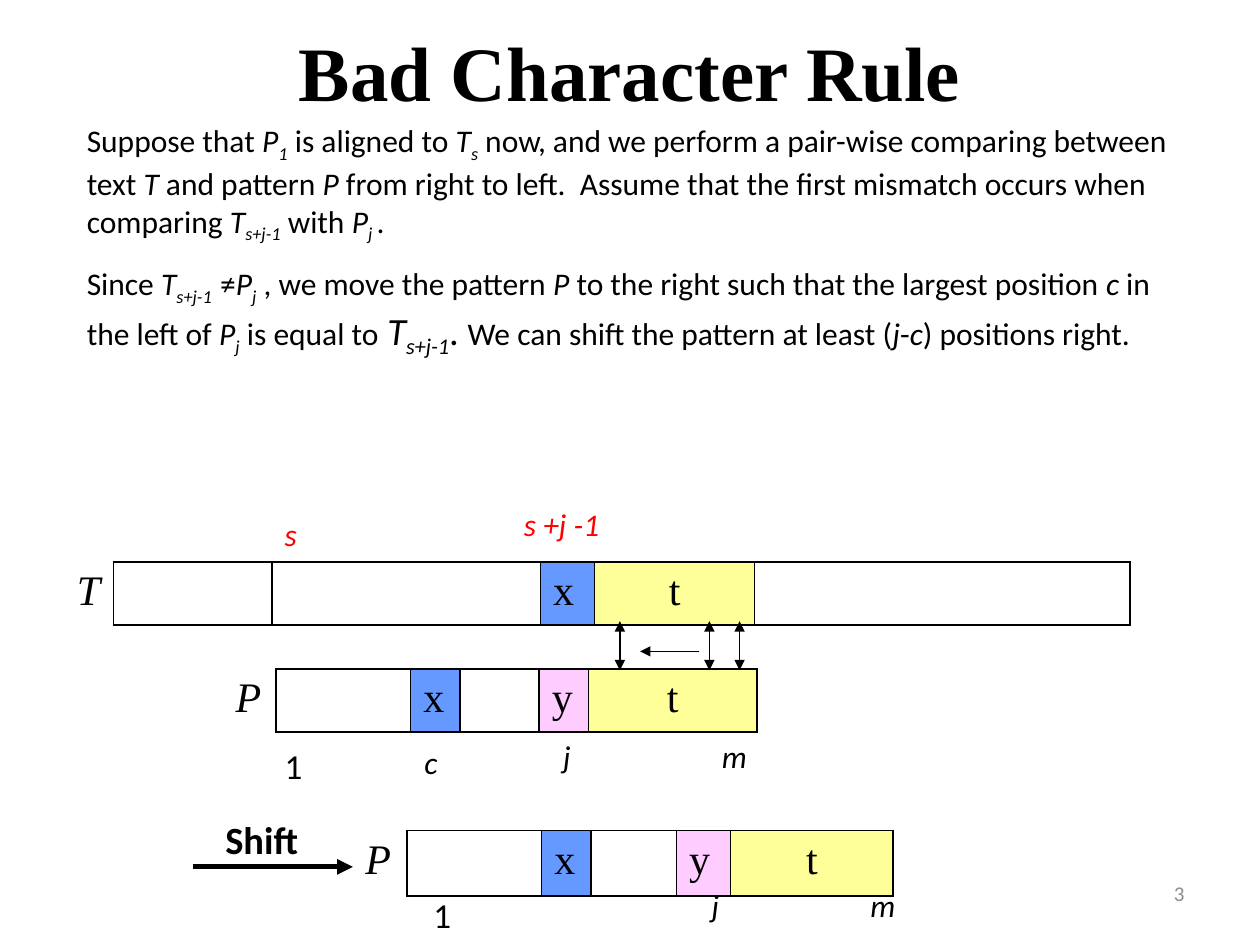
from lxml import etree
from pptx import Presentation
from pptx.dml.color import RGBColor
from pptx.enum.shapes import MSO_CONNECTOR
from pptx.enum.text import MSO_ANCHOR, PP_ALIGN
from pptx.oxml.ns import qn
from pptx.util import Inches, Pt

LINE = MSO_CONNECTOR.STRAIGHT
MID, TOP = MSO_ANCHOR.MIDDLE, MSO_ANCHOR.TOP
LEFT, MIDDLE, RIGHT = PP_ALIGN.LEFT, PP_ALIGN.CENTER, PP_ALIGN.RIGHT

BLACK, RED, GRAY = "000000", "FF0000", "8C8C8C"
BLUE, PINK, GOLD = "6699FF", "FFCCFF", "FFFF99"
FILLS = {"x": BLUE, "y": PINK, "t": GOLD}


def color(code):
    return RGBColor.from_string(code)


class Deck:
    sans = "Calibri"
    serif = "Times New Roman"

    def __init__(self):
        self.prs = Presentation()
        self.prs.slide_width = Inches(10)
        self.prs.slide_height = Inches(7.5)
        self.slide = self.prs.slides.add_slide(self.prs.slide_layouts[5])

    def run(self, para, text, mark="", size=18, tint=BLACK, face=None):
        """Marks: i italic, b bold, s subscript."""
        run = para.add_run()
        run.text = text
        font = run.font
        font.name = face or self.sans
        font.size = Pt(size)
        font.italic = "i" in mark
        font.bold = "b" in mark
        font.color.rgb = color(tint)
        if "s" in mark:
            run._r.get_or_add_rPr().set("baseline", "-25000")

    def title(self, text, x, y, w, h):
        shape = self.slide.shapes.title
        shape.left, shape.top = Inches(x), Inches(y)
        shape.width, shape.height = Inches(w), Inches(h)
        frame = shape.text_frame
        frame.vertical_anchor = MID
        para = frame.paragraphs[0]
        para.alignment = MIDDLE
        self.run(para, text, "b", 44, face=self.serif)

    def text(self, paras, x, y, w, h, align=LEFT, anchor=TOP):
        box = self.slide.shapes.add_textbox(
            Inches(x), Inches(y), Inches(w), Inches(h))
        frame = box.text_frame
        frame.word_wrap = True
        frame.vertical_anchor = anchor
        for i, runs in enumerate(paras):
            para = frame.add_paragraph() if i else frame.paragraphs[0]
            para.alignment = align
            if i:
                para.space_before = Pt(11)
            for run in runs:
                self.run(para, *run)

    def label(self, text, x, y, w=0.39, h=0.5, mark="i", size=18, tint=BLACK):
        self.text([[(text, mark, size, tint)]], x, y, w, h)

    def edge(self, cell, side, shown):
        props = cell._tc.get_or_add_tcPr()
        line = etree.SubElement(props, qn("a:ln" + side), w=str(Pt(1)))
        if shown:
            fill = etree.SubElement(line, qn("a:solidFill"))
            etree.SubElement(fill, qn("a:srgbClr"), val=BLACK)
        else:
            etree.SubElement(line, qn("a:noFill"))

    def strip(self, words, widths, x, y, h):
        """One row of boxes, led by an unboxed name."""
        table = self.slide.shapes.add_table(
            1, len(words), Inches(x), Inches(y),
            Inches(sum(widths)), Inches(h)).table
        table.first_row = table.horz_banding = False
        table.rows[0].height = Inches(h)
        for i, (word, width) in enumerate(zip(words, widths)):
            table.columns[i].width = Inches(width)
            cell = table.cell(0, i)
            for side in "LRTB":
                self.edge(cell, side, i > 0 or side == "R")
            if word in FILLS:
                cell.fill.solid()
                cell.fill.fore_color.rgb = color(FILLS[word])
            else:
                cell.fill.background()
            para = cell.text_frame.paragraphs[0]
            para.alignment = MIDDLE if word == "t" else LEFT
            if word:
                self.run(para, word, "" if i else "i", 24, face=self.serif)

    def arrow(self, x1, y1, x2, y2, width=0.75, both=False):
        link = self.slide.shapes.add_connector(
            LINE, Inches(x1), Inches(y1), Inches(x2), Inches(y2))
        link.line.width = Pt(width)
        link.line.color.rgb = color(BLACK)
        line = link.line._get_or_add_ln()
        for end in ("headEnd", "tailEnd") if both else ("tailEnd",):
            etree.SubElement(line, qn("a:" + end), type="triangle")
        etree.SubElement(link._element.spPr, qn("a:effectLst"))


def main():
    deck = Deck()

    # Title, page number and rule
    deck.text([[("3", "", 12, GRAY)]], 7.17, 6.83, 2.33, 0.52, RIGHT, MID)
    deck.title("Bad Character Rule", 0.5, 0.13, 9, 0.87)
    first = [
        ("Suppose that ",), ("P", "i"), ("1", "is"), (" is aligned to ",),
        ("T", "i"), ("s", "is"),
        (" now, and we perform a pair-wise comparing between text ",),
        ("T", "i"), (" and pattern ",), ("P", "i"),
        (" from right to left.  Assume that the first mismatch occurs"
         " when comparing ",),
        ("T", "i"), ("s+j-1", "is"), (" with ",),
        ("P", "i"), ("j ", "is"), (".",),
    ]
    second = [
        ("Since ",), ("T", "i"), ("s+j-1  ", "is"), ("≠",),
        ("P", "i"), ("j", "is"), (" , we move the pattern ",), ("P", "i"),
        (" to the right such that the largest position ",), ("c", "i"),
        (" in the left of ",), ("P", "i"), ("j", "is"), (" is equal to",),
        (" T", "i", 22), ("s+j-1", "is", 22), (". ", "", 22),
        ("We can shift the pattern at least (",), ("j", "i"), ("-",),
        ("c", "i"), (") positions right.",),
    ]
    deck.text([first, second], 0.59, 0.91, 8.82, 3.1)

    # Text row, pattern row and shifted pattern row
    pattern = ["P", "", "x", "", "y", "t"]
    deck.strip(["T", "", "", "x", "t", ""],
               [0.39, 1.26, 2.13, 0.43, 1.27, 2.98], 0.51, 4.46, 0.5)
    deck.strip(pattern, [0.42, 1.07, 0.39, 0.63, 0.39, 1.34], 1.77, 5.31, 0.5)
    deck.strip(pattern, [0.43, 1.07, 0.39, 0.68, 0.43, 1.29], 2.8, 6.59, 0.52)

    # Positions in the text
    deck.label("s", 2.16, 4.04, tint=RED)
    deck.label("s +j -1", 4.06, 3.96, w=2.05, tint=RED)

    # Positions in both patterns
    for one, j, y in ((2.16, 4.37, 5.8), (3.34, 5.55, 6.98)):
        deck.label("j", j, y)
        deck.label("m", j + 1.26, y)
        deck.label("1", one, y + 0.06, h=0.43, mark="", size=20)
    deck.label("c", 3.27, 5.85)

    # Shift
    deck.arrow(1.53, 6.88, 2.8, 6.88, width=3)
    deck.label("Shift", 1.69, 6.43, w=0.94, h=0.47, mark="b", size=22)

    # Comparing from right to left
    for x in (5.87, 5.63, 4.92):
        deck.arrow(x, 4.93, x, 5.32, both=True)
    deck.arrow(5.55, 5.17, 5.08, 5.17)

    deck.prs.save("out.pptx")


if __name__ == "__main__":
    main()
